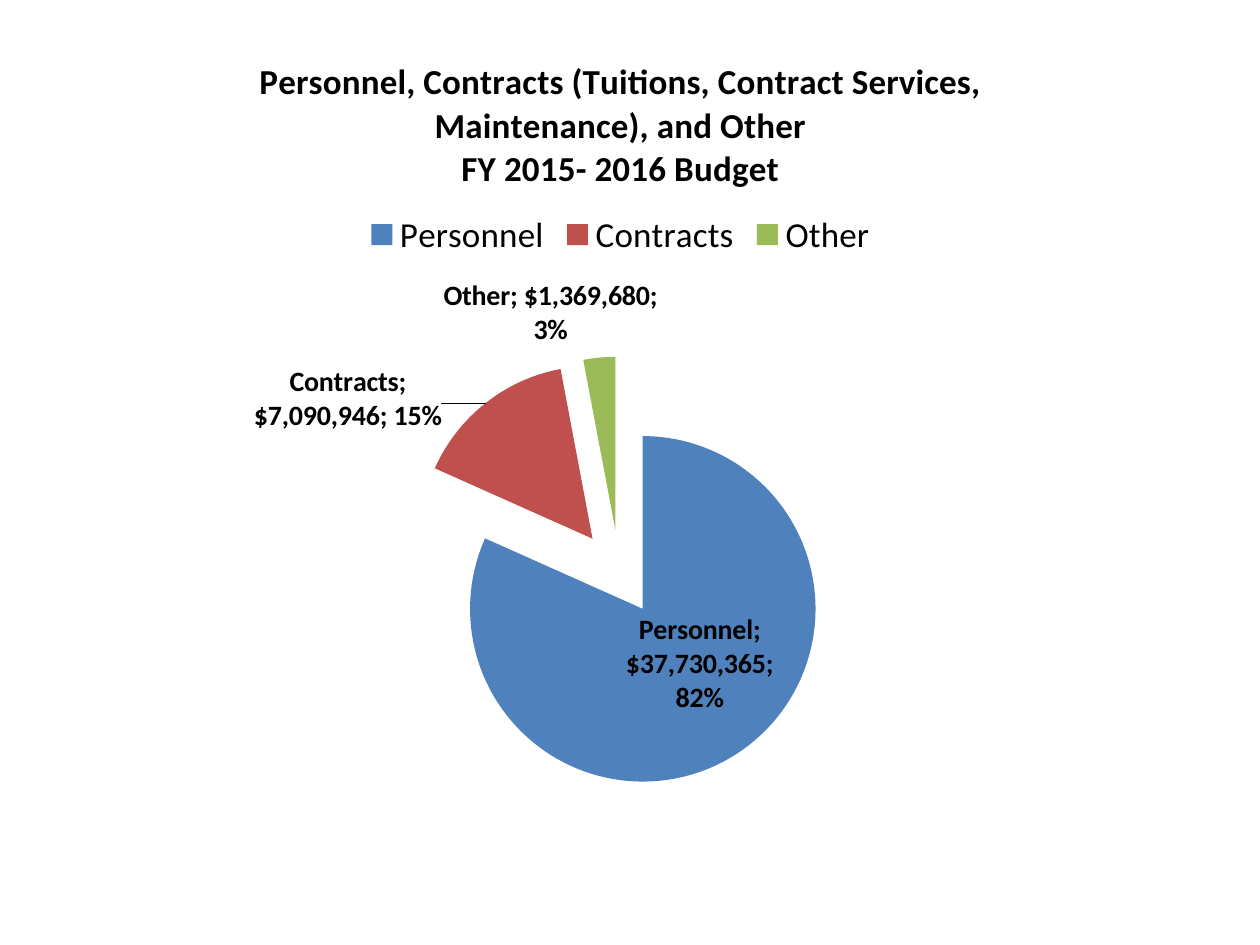
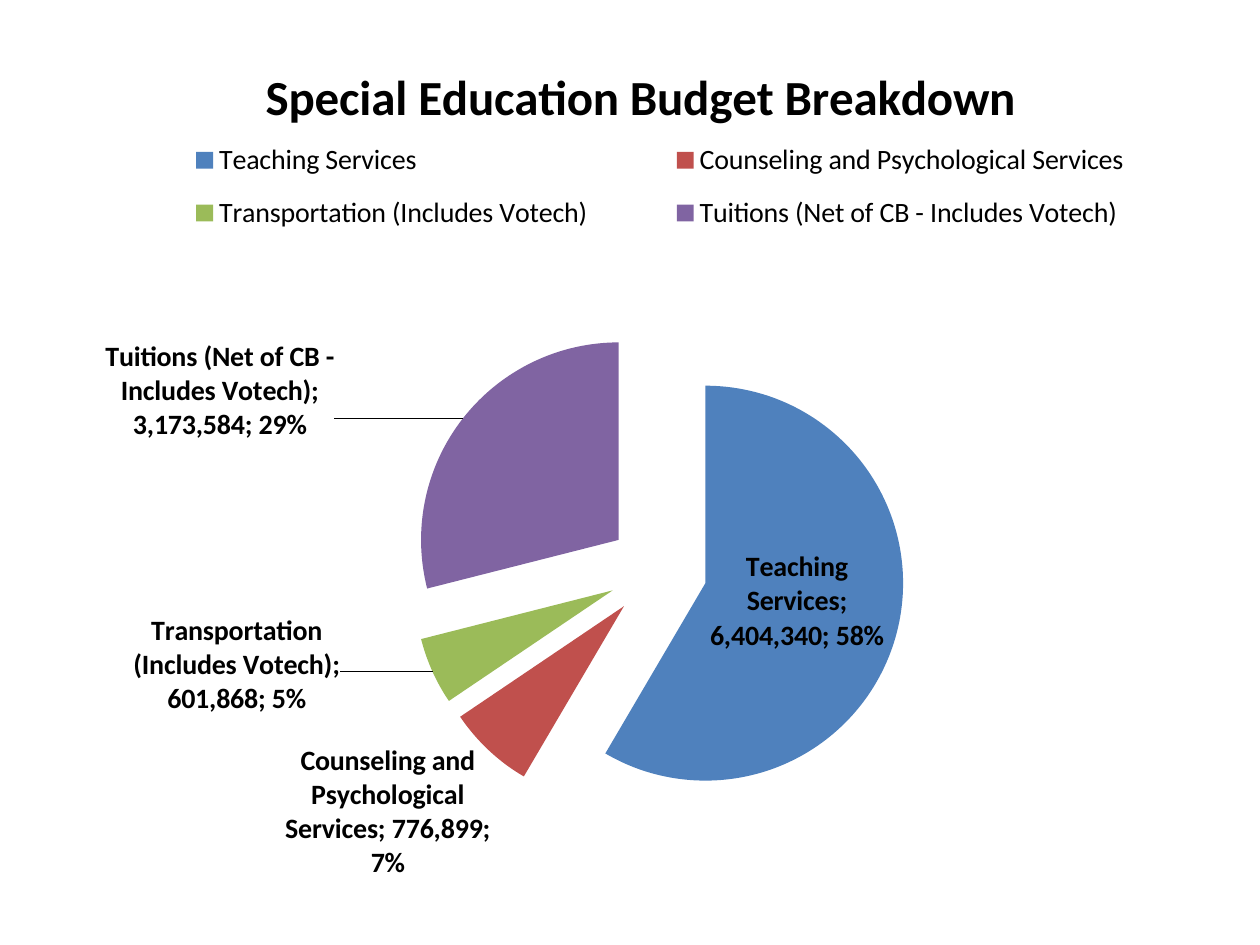
from copy import deepcopy

from pptx import Presentation
from pptx.chart.data import CategoryChartData
from pptx.dml.color import RGBColor
from pptx.enum.chart import XL_CHART_TYPE, XL_LABEL_POSITION, XL_LEGEND_POSITION
from pptx.oxml import parse_xml
from pptx.oxml.ns import nsdecls, qn
from pptx.util import Pt

PX = 914400 / 126
FONT = "Calibri"
SLICE_COLOURS = ["4F81BD", "C0504D", "9BBB59", "8064A2"]


def style_font(font, size, bold=False, colour="000000"):
    font.name = FONT
    font.size = Pt(size)
    font.bold = bold
    font.color.rgb = RGBColor.from_string(colour)


def manual_layout(**settings):
    tags = "".join(f'<c:{tag} val="{value}"/>' for tag, value in settings.items())
    return parse_xml(f'<c:layout {nsdecls("c")}><c:manualLayout>{tags}</c:manualLayout></c:layout>')


# Budgets: plot and legend_box are left, top, width, height as shares of the
# chart; label_shifts moves single labels away from their automatic place
budgets = [
    {
        "title": "Personnel, Contracts (Tuitions, Contract Services, Maintenance), and Other\n"
                 "FY 2015- 2016 Budget",
        "title_size": 20,
        "legend_size": 20,
        "legend_box": None,
        "size": (1115, 829),
        "plot": (0.305, 0.393, 0.388, 0.521),
        "number_format": '"$"#,##0',
        "amounts": {"Personnel": 37730365, "Contracts": 7090946, "Other": 1369680},
        "label_shifts": {1: (-0.035, 0.044), 2: (0.053, -0.003)},
    },
    {
        "title": "Special Education Budget Breakdown",
        "title_size": 28,
        "legend_size": 16,
        "legend_box": (0.046, 0.109, 0.942, 0.144),
        "size": (1155, 861),
        "plot": (0.1, 0.34, 0.83, 0.574),
        "number_format": "#,##0",
        "amounts": {
            "Teaching Services": 6404340,
            "Counseling and Psychological Services": 776899,
            "Transportation (Includes Votech)": 601868,
            "Tuitions (Net of CB - Includes Votech)": 3173584,
        },
        "label_shifts": {1: (0.006, -0.013), 2: (-0.074, -0.07), 3: (-0.106, 0.033)},
    },
]

presentation = Presentation()
presentation.slide_width = round(1260 * PX)
presentation.slide_height = round(945 * PX)

for budget in budgets:
    slide = presentation.slides.add_slide(presentation.slide_layouts[6])

    # Pie chart
    amounts = CategoryChartData(number_format=budget["number_format"])
    amounts.categories = list(budget["amounts"])
    amounts.add_series("Series 1", list(budget["amounts"].values()))
    width, height = budget["size"]
    pie = slide.shapes.add_chart(
        XL_CHART_TYPE.PIE, round(63 * PX), round(31 * PX),
        round(width * PX), round(height * PX), amounts,
    ).chart
    style_font(pie.font, 10)

    # Title
    pie.has_title = True
    heading = pie.chart_title.text_frame
    heading.text = budget["title"]
    for paragraph in heading.paragraphs:
        for run in paragraph.runs:
            style_font(run.font, budget["title_size"], bold=True)

    # Legend
    pie.has_legend = True
    pie.legend.position = XL_LEGEND_POSITION.TOP
    pie.legend.include_in_layout = False
    style_font(pie.legend.font, budget["legend_size"])
    if budget["legend_box"]:
        legend = pie.legend._element
        for old_layout in legend.findall(qn("c:layout")):
            legend.remove(old_layout)
        left, top, box_width, box_height = budget["legend_box"]
        legend.find(qn("c:legendPos")).addnext(manual_layout(
            xMode="edge", yMode="edge", x=left, y=top, w=box_width, h=box_height,
        ))

    # Plot position
    plot = pie.plots[0]
    plot.vary_by_categories = True
    plot_area = plot._element.getparent()
    for old_layout in plot_area.findall(qn("c:layout")):
        plot_area.remove(old_layout)
    left, top, plot_width, plot_height = budget["plot"]
    plot_area.insert(0, manual_layout(
        layoutTarget="inner", xMode="edge", yMode="edge",
        x=left, y=top, w=plot_width, h=plot_height,
    ))

    # Slices, pulled apart
    spending = plot.series[0]
    for index in range(len(budget["amounts"])):
        fill = spending.points[index].format.fill
        fill.solid()
        fill.fore_color.rgb = RGBColor.from_string(SLICE_COLOURS[index])
    spending._element.find(qn("c:tx")).addnext(
        parse_xml(f'<c:explosion {nsdecls("c")} val="25"/>'))

    # Slice labels: amounts take the number format of the data
    labels = spending.data_labels
    style_font(labels.font, 16, bold=True)
    labels.position = XL_LABEL_POSITION.BEST_FIT
    labels.show_category_name = True
    labels.show_value = True
    labels.show_percentage = True
    label_list = labels._element
    for leader in label_list.findall(qn("c:showLeaderLines")):
        label_list.remove(leader)
    shared_settings = list(label_list)
    label_list.append(parse_xml(f'<c:showLeaderLines {nsdecls("c")} val="1"/>'))

    # Shifted labels
    for place, (index, (x, y)) in enumerate(budget["label_shifts"].items()):
        label = parse_xml(f'<c:dLbl {nsdecls("c")}><c:idx val="{index}"/></c:dLbl>')
        label.append(manual_layout(x=x, y=y))
        for setting in shared_settings:
            label.append(deepcopy(setting))
        label_list.insert(place, label)

presentation.save("out.pptx")
